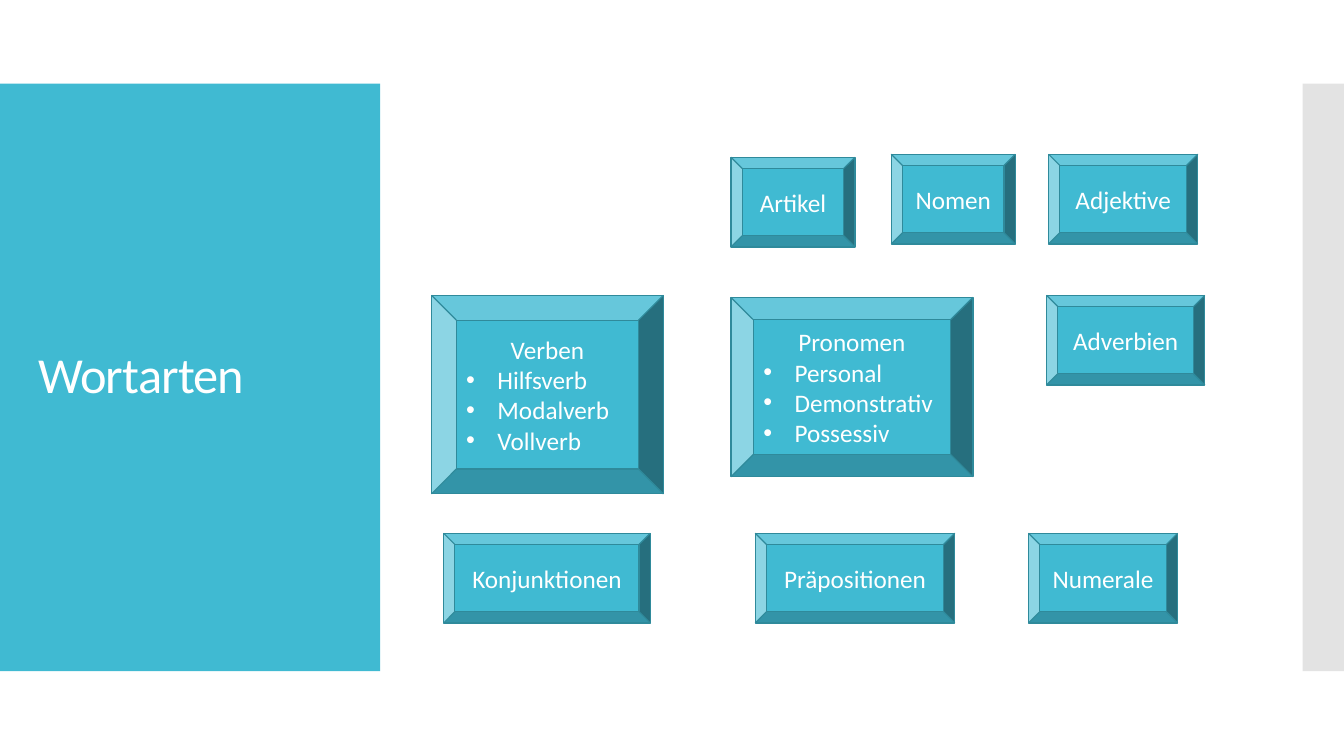
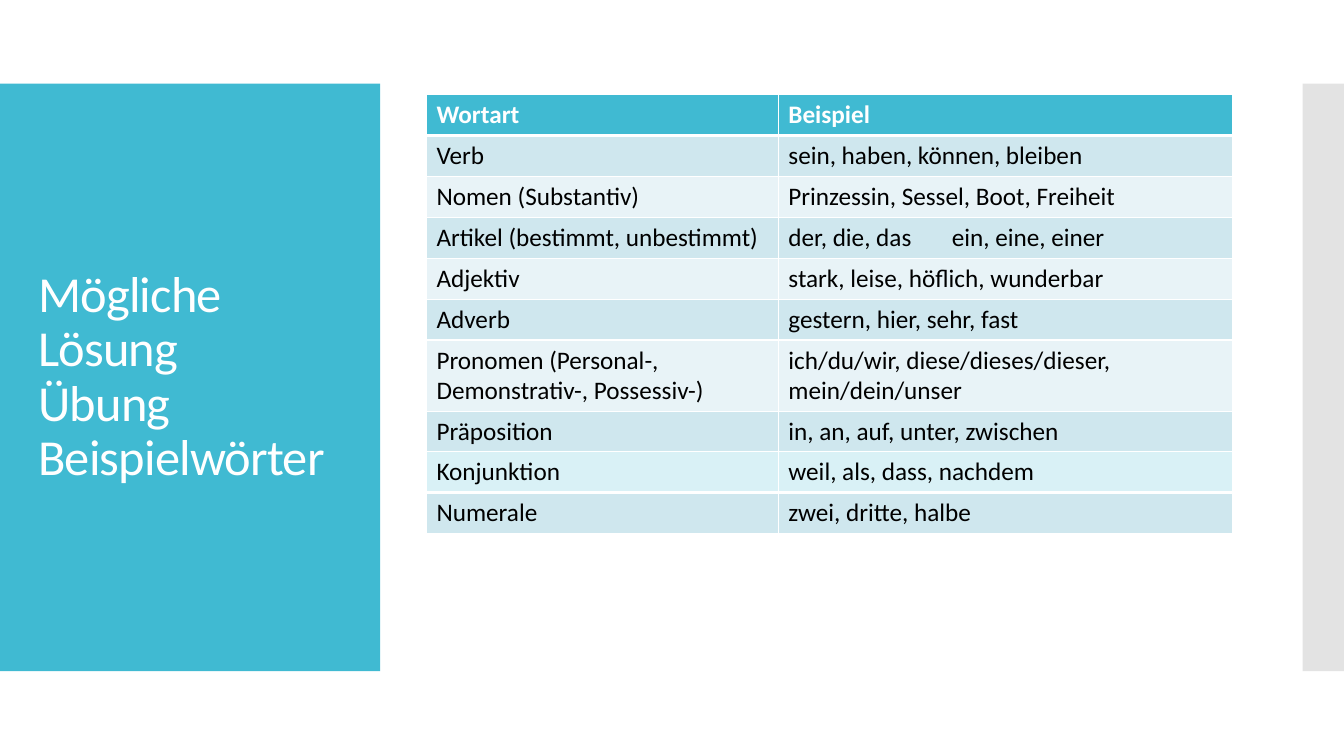
"""Build two German slides on word classes: an overview and a table of example words."""
from lxml.etree import SubElement
from pptx import Presentation
from pptx.dml.color import RGBColor
from pptx.enum.shapes import MSO_SHAPE as Shape
from pptx.enum.text import MSO_ANCHOR as Anchor, MSO_AUTO_SIZE as AutoSize, PP_ALIGN as Align
from pptx.oxml import parse_xml
from pptx.oxml.ns import nsdecls, qn
from pptx.text.text import Font
from pptx.util import Inches, Pt

TEAL, EDGE, GREY = "40BAD2", "2F8A9B", "C8C8C8"
WHITE, BLACK = "FFFFFF", "000000"
ROW_DARK, ROW_LIGHT, ROW_PALE = "CFE7EE", "E8F3F7", "D9F1F6"
BAND_TOP, BAND_HEIGHT = 0.83, 5.83
BULLET_INDENT = Inches(0.31)


def paint(color_format, color):
    color_format.rgb = RGBColor.from_string(color)


def style_font(font, size, color, bold=False):
    font.name = "Calibri"
    font.size = Pt(size)
    font.bold = bold
    font.fill.solid()
    paint(font.fill.fore_color, color)


deck = Presentation()
deck.slide_width, deck.slide_height = Inches(13.33), Inches(7.5)
layout = deck.slide_layouts[5]

title_level = deck.slide_master.element.find(f".//{qn('p:titleStyle')}/{qn('a:lvl1pPr')}")
title_level.set("algn", "l")
title_properties = title_level.find(qn("a:defRPr"))
title_properties.set("spc", "-60")
style_font(Font(title_properties), 36, WHITE)

title_frame = layout.placeholders[0]
title_frame.left, title_frame.top = Inches(0.28), Inches(1.23)
title_frame.width, title_frame.height = Inches(3.22), Inches(5.03)

pages = []
for heading in ("Wortarten", "Mögliche Lösung\vÜbung\vBeispielwörter"):
    page = deck.slides.add_slide(layout)
    title = page.shapes.title.text_frame
    title.text = heading
    title.word_wrap = True
    title.auto_size = AutoSize.NONE
    title.vertical_anchor = Anchor.MIDDLE
    title.paragraphs[0].line_spacing = 0.9
    pages.append(page)
overview, solution = pages

for left, width, color, opacity in ((0, 3.77, TEAL, 100), (12.92, 0.41, GREY, 50)):
    band = overview.shapes.add_shape(
        Shape.RECTANGLE, Inches(left), Inches(BAND_TOP), Inches(width), Inches(BAND_HEIGHT))
    band.shadow.inherit = False
    band.line.fill.background()
    band.fill.solid()
    paint(band.fill.fore_color, color)
    if opacity < 100:
        band_color = band.element.spPr.find(f"{qn('a:solidFill')}/{qn('a:srgbClr')}")
        SubElement(band_color, qn("a:alpha"), val=str(opacity * 1000))
    layout.shapes.element.insert(2, band.element)

word_classes = [
    (4.28, 2.93, 2.3, 1.97, ["Verben", "Hilfsverb", "Modalverb", "Vollverb"]),
    (8.84, 1.53, 1.23, 0.89, ["Nomen"]),
    (10.4, 1.53, 1.48, 0.89, ["Adjektive"]),
    (7.49, 5.29, 1.98, 0.89, ["Präpositionen"]),
    (7.25, 1.56, 1.23, 0.89, ["Artikel"]),
    (10.2, 5.29, 1.48, 0.89, ["Numerale"]),
    (4.4, 5.29, 2.05, 0.89, ["Konjunktionen"]),
    (7.25, 2.95, 2.4, 1.78, ["Pronomen", "Personal", "Demonstrativ", "Possessiv"]),
    (10.38, 2.93, 1.57, 0.89, ["Adverbien"]),
]
for left, top, width, height, lines in word_classes:
    box = overview.shapes.add_shape(
        Shape.BEVEL, Inches(left), Inches(top), Inches(width), Inches(height))
    box.shadow.inherit = False
    box.fill.solid()
    paint(box.fill.fore_color, TEAL)
    paint(box.line.color, EDGE)
    box.line.width = Pt(0.85)
    box.text_frame.text = "\n".join(lines)
    box.text_frame.word_wrap = True
    box.text_frame.vertical_anchor = Anchor.MIDDLE
    for index, para in enumerate(box.text_frame.paragraphs):
        para.alignment = Align.LEFT if index else Align.CENTER
        style_font(para.runs[0].font, 18, WHITE)
        if index:
            properties = para._p.get_or_add_pPr()
            properties.set("marL", str(BULLET_INDENT))
            properties.set("indent", str(-BULLET_INDENT))
            SubElement(properties, qn("a:buFont"), typeface="Arial")
            SubElement(properties, qn("a:buChar"), char="•")

main_rows = [
    ("Wortart", "Beispiel"),
    ("Verb", "sein, haben, können, bleiben"),
    ("Nomen (Substantiv)", "Prinzessin, Sessel, Boot, Freiheit"),
    ("Artikel (bestimmt, unbestimmt)", "der, die, das\tein, eine, einer"),
    ("Adjektiv", "stark, leise, höflich, wunderbar"),
    ("Adverb", "gestern, hier, sehr, fast"),
    ("Pronomen (Personal-, Demonstrativ-, Possessiv-)",
     "ich/du/wir, diese/dieses/dieser, mein/dein/unser"),
    ("Präposition", "in, an, auf, unter, zwischen"),
]
extra_rows = [
    ("Konjunktion", "weil, als, dass, nachdem"),
    ("Numerale", "zwei, dritte, halbe"),
]
ROW_HEIGHT, TALL_ROW_HEIGHT = Inches(2.83 / 7), Inches(0.71)
tables = [
    (0.94, main_rows, TEAL, WHITE, True),
    (4.48, extra_rows, ROW_PALE, BLACK, False),
]
for top, rows, first_fill, first_color, first_bold in tables:
    table = solution.shapes.add_table(
        len(rows), 2, Inches(4.23), Inches(top), Inches(8), ROW_HEIGHT * len(rows)).table
    table.first_row = first_bold
    table.horz_banding = False
    table.columns[0].width, table.columns[1].width = Inches(3.49), Inches(4.51)
    for row, texts in enumerate(rows):
        table.rows[row].height = TALL_ROW_HEIGHT if texts[0].startswith("Pronomen") else ROW_HEIGHT
        fill = (ROW_DARK if row % 2 else ROW_LIGHT) if row else first_fill
        for column, text in enumerate(texts):
            cell = table.cell(row, column)
            cell.text = text
            cell.fill.solid()
            paint(cell.fill.fore_color, fill)
            para = cell.text_frame.paragraphs[0]
            style_font(para.runs[0].font, 18, BLACK if row else first_color,
                       first_bold and row == 0)
            if "\t" in text:
                tab_stops = SubElement(para._p.get_or_add_pPr(), qn("a:tabLst"))
                SubElement(tab_stops, qn("a:tab"), pos=str(Inches(1.62)), algn="l")
            borders = {"lnL": 1, "lnR": 1, "lnT": 3 if row == 1 else 1, "lnB": 1 if row else 3}
            for position, (side, weight) in enumerate(borders.items()):
                border = parse_xml(
                    f'<a:{side} {nsdecls("a")} w="{Pt(weight)}"><a:solidFill>'
                    f'<a:srgbClr val="{WHITE}"/></a:solidFill></a:{side}>')
                cell._tc.get_or_add_tcPr().insert(position, border)

deck.save("out.pptx")
